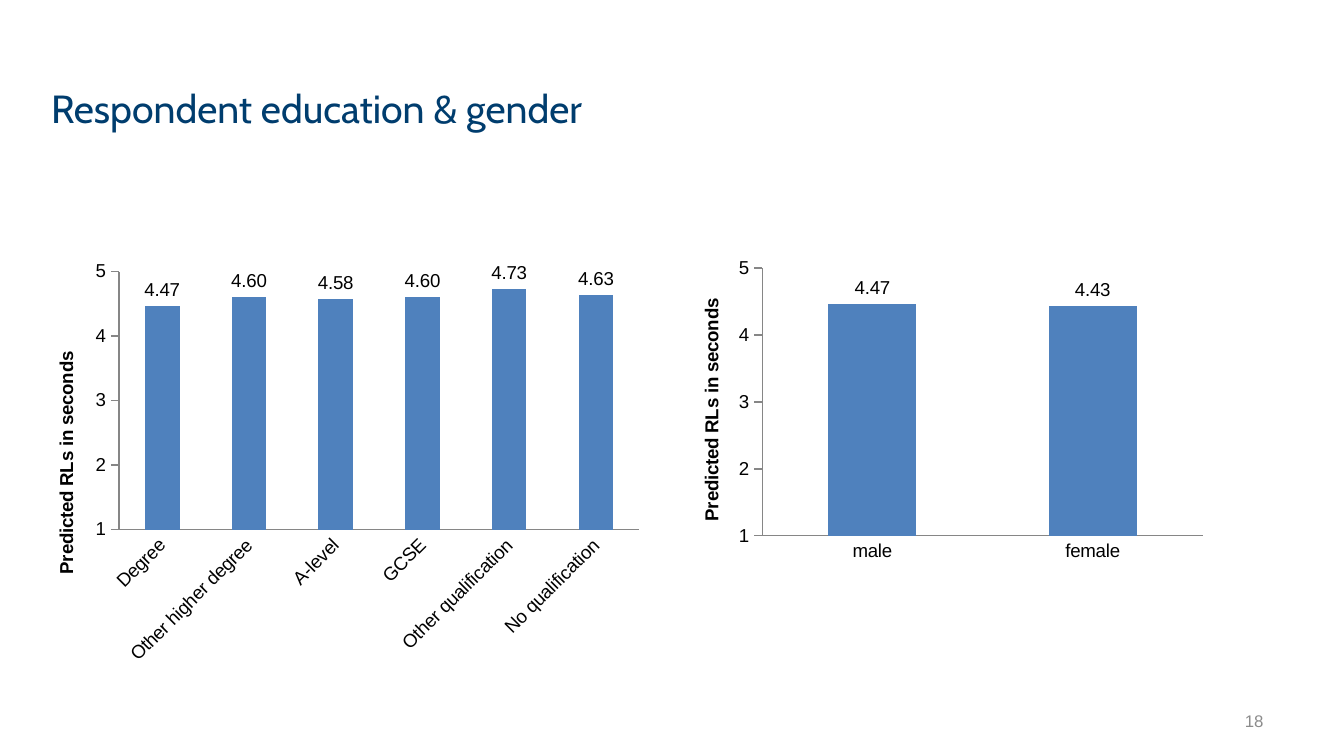
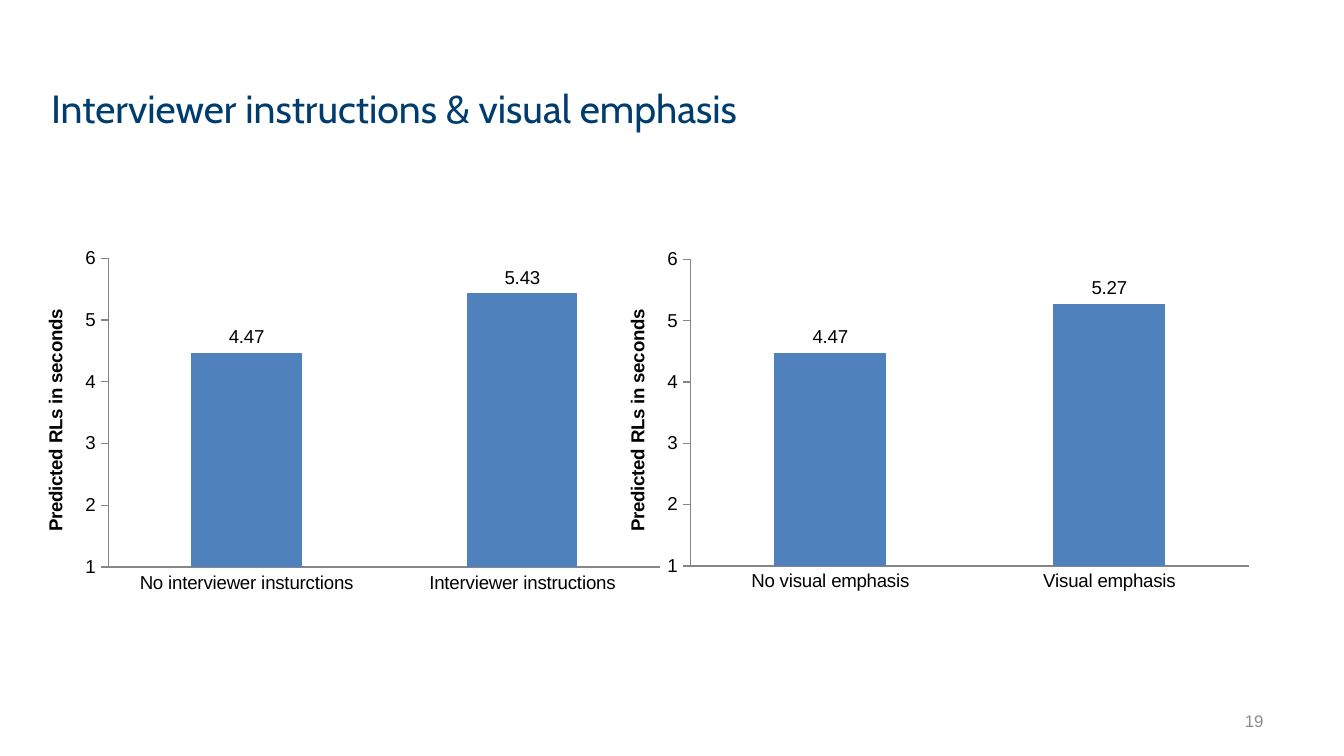
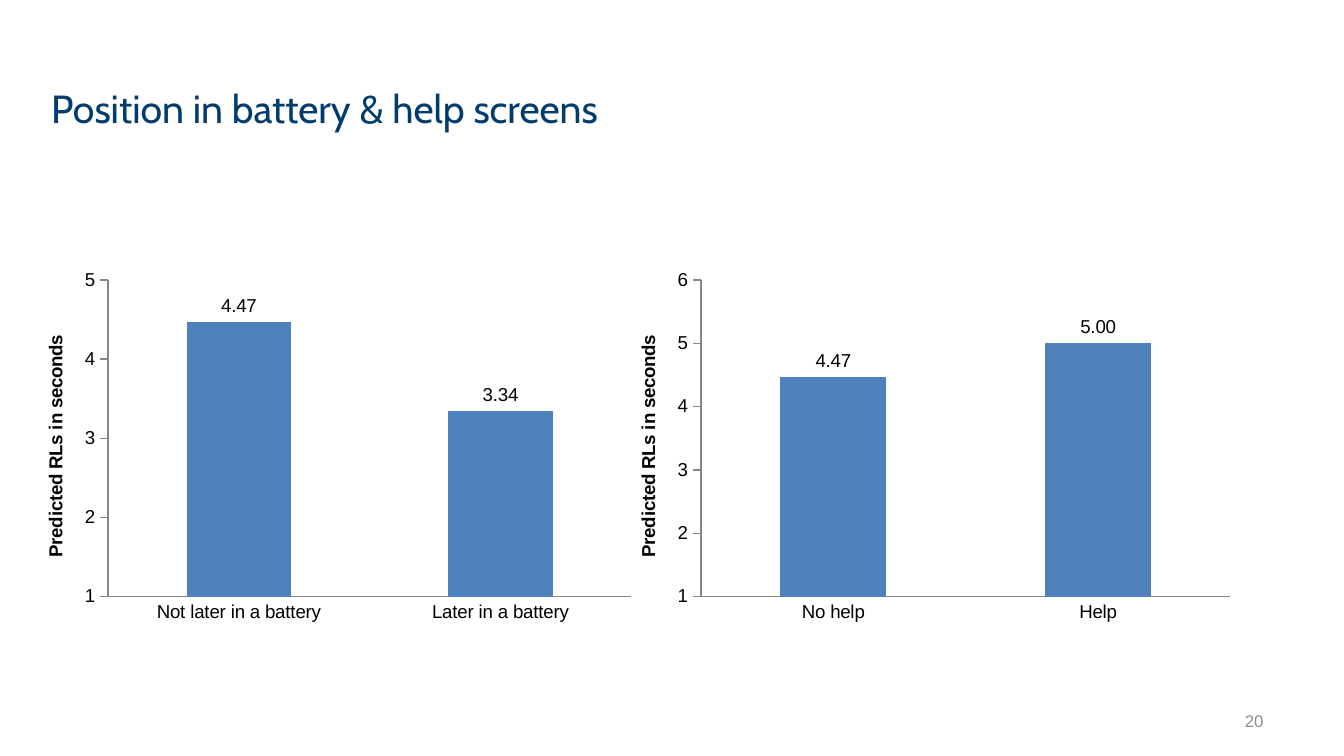
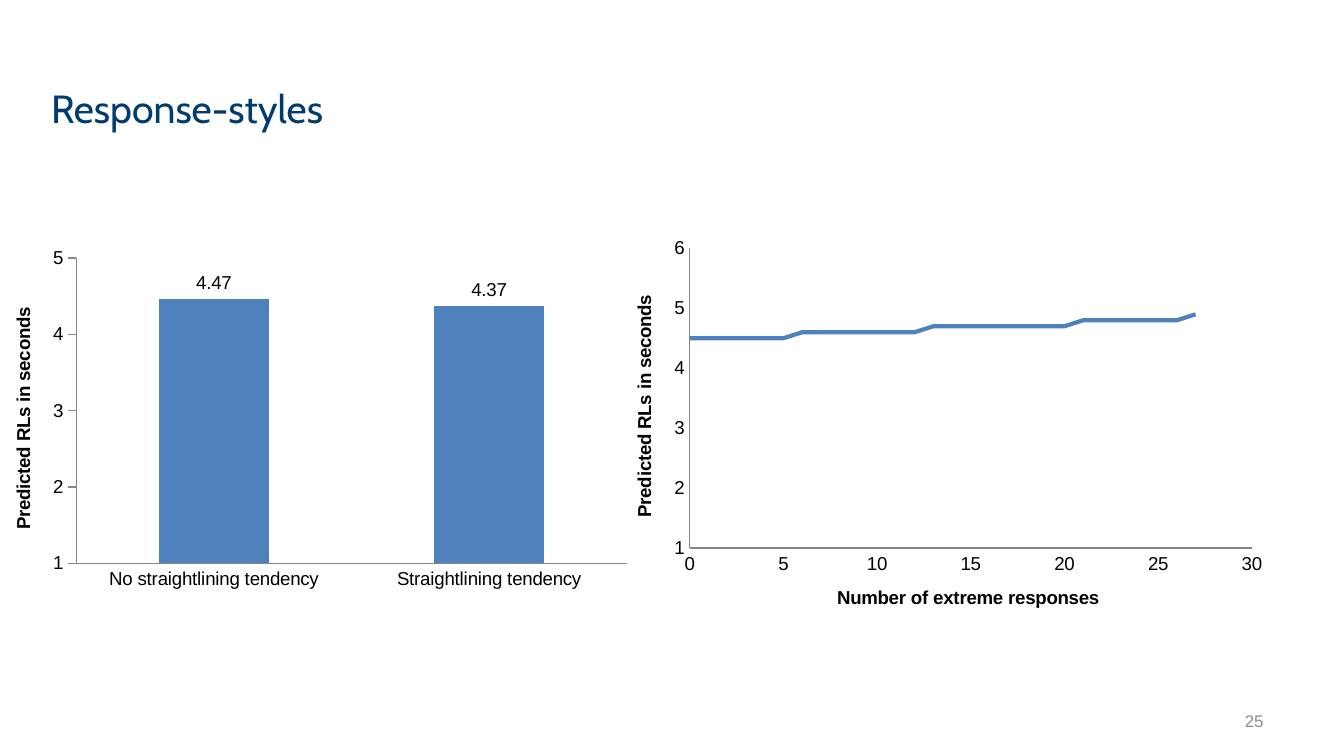
from dataclasses import dataclass

from pptx import Presentation
from pptx.chart.chart import Chart
from pptx.chart.data import CategoryChartData, XyChartData
from pptx.dml.color import RGBColor
from pptx.enum.chart import XL_CHART_TYPE, XL_LABEL_POSITION, XL_TICK_MARK
from pptx.enum.text import MSO_ANCHOR, PP_ALIGN
from pptx.util import Inches, Pt

NAVY, BLUE, GREY, RULE, BLACK = "003D6E", "4F81BD", "8C8C8C", "868686", "000000"
BODY, HEAD = "Arial", "Cabin"
SERIES = "Series 1"
TIMING = "Predicted RLs in seconds"
TITLE_BOX = (0.28, 0.58, 5.43, 0.75)
PAGE_BOX = (7.17, 5.21, 2.33, 0.3)

Box = tuple[float, float, float, float]


@dataclass
class Bars:
    box: Box
    data: dict[str, float]
    slant: bool = False


@dataclass
class Trend:
    box: Box
    label: str
    values: list[float]


@dataclass
class Page:
    number: int
    title: str
    charts: list[Bars | Trend]


PAGES = [
    Page(18, "Respondent education & gender", [
        Bars((0.2, 1.88, 4.65, 3.13), {
            "Degree": 4.47, "Other higher degree": 4.6, "A-level": 4.58,
            "GCSE": 4.6, "Other qualification": 4.73, "No qualification": 4.63,
        }, slant=True),
        Bars((5, 1.87, 4.03, 2.36), {"male": 4.47, "female": 4.43}),
    ]),
    Page(19, "Interviewer instructions & visual emphasis", [
        Bars((0.12, 1.79, 4.89, 2.68),
             {"No interviewer insturctions": 4.47, "Interviewer instructions": 5.43}),
        Bars((4.45, 1.8, 4.94, 2.66),
             {"No visual emphasis": 4.47, "Visual emphasis": 5.27}),
    ]),
    Page(20, "Position in battery & help screens", [
        Bars((0.12, 1.95, 4.67, 2.74),
             {"Not later in a battery": 4.47, "Later in a battery": 3.34}),
        Bars((4.53, 1.95, 4.72, 2.74), {"No help": 4.47, "Help": 5}),
    ]),
    Page(25, "Response-styles", [
        Bars((-0.12, 1.79, 4.88, 2.65),
             {"No straightlining tendency": 4.47, "Straightlining tendency": 4.37}),
        Trend((4.5, 1.71, 4.99, 3.03), "Number of extreme responses",
              [4.5] * 6 + [4.6] * 7 + [4.7] * 8 + [4.8] * 6 + [4.9]),
    ]),
]


def color(code: str) -> RGBColor:
    return RGBColor.from_string(code)


def lengths(box: Box) -> list[Inches]:
    return [Inches(side) for side in box]


def style(font, name: str, size: float, code: str, bold: bool = False) -> None:
    font.name, font.size, font.bold = name, Pt(size), bold
    font.color.rgb = color(code)


def name_axis(axis, label: str) -> None:
    frame = axis.axis_title.text_frame
    frame.text = label
    style(frame.paragraphs[0].font, BODY, 10, BLACK, bold=True)


def set_axes(chart: Chart, tick: XL_TICK_MARK) -> None:
    """Apply the axis look that all charts share."""
    across, up = chart.category_axis, chart.value_axis
    for axis in (across, up):
        axis.has_major_gridlines = False
        axis.minor_tick_mark = XL_TICK_MARK.NONE
        axis.format.line.color.rgb = color(RULE)
        axis.format.line.width = Pt(0.75)
        axis.tick_labels.number_format = "General"
        axis.tick_labels.number_format_is_linked = False
        style(axis.tick_labels.font, BODY, 10, BLACK)
    across.major_tick_mark, up.major_tick_mark = XL_TICK_MARK.NONE, tick
    up.minimum_scale = up.major_unit = 1
    name_axis(up, TIMING)


def add_chart(slide, kind: XL_CHART_TYPE, box: Box, data) -> Chart:
    chart = slide.shapes.add_chart(kind, *lengths(box), data).chart
    chart.has_title = chart.has_legend = False
    style(chart.font, BODY, 10, BLACK)
    chart.plots[0].vary_by_categories = False
    return chart


def draw_bars(slide, bars: Bars) -> None:
    data = CategoryChartData()
    data.categories = list(bars.data)
    data.add_series(SERIES, list(bars.data.values()))
    chart = add_chart(slide, XL_CHART_TYPE.COLUMN_CLUSTERED, bars.box, data)
    set_axes(chart, XL_TICK_MARK.OUTSIDE)
    if bars.slant:
        chart.category_axis._element.get_or_add_txPr().bodyPr.set("rot", "-2700000")
    plot = chart.plots[0]
    plot.gap_width = 150
    fill = plot.series[0].format.fill
    fill.solid()
    fill.fore_color.rgb = color(BLUE)
    labels = plot.series[0].data_labels
    labels.show_value = True
    labels.number_format = "#,##0.00"
    labels.number_format_is_linked = False
    labels.position = XL_LABEL_POSITION.OUTSIDE_END
    style(labels.font, BODY, 10, BLACK)


def draw_trend(slide, trend: Trend) -> None:
    data = XyChartData()
    line = data.add_series(SERIES)
    for x, y in enumerate(trend.values):
        line.add_data_point(x, y)
    kind = XL_CHART_TYPE.XY_SCATTER_SMOOTH_NO_MARKERS
    chart = add_chart(slide, kind, trend.box, data)
    set_axes(chart, XL_TICK_MARK.NONE)
    name_axis(chart.category_axis, trend.label)
    stroke = chart.plots[0].series[0].format.line
    stroke.color.rgb = color(BLUE)
    stroke.width = Pt(2.25)


def draw_title(slide, text: str) -> None:
    title = slide.shapes.title
    title.left, title.top, title.width, title.height = lengths(TITLE_BOX)
    frame = title.text_frame
    frame.text = text
    frame.vertical_anchor = MSO_ANCHOR.TOP
    line = frame.paragraphs[0]
    line.alignment = PP_ALIGN.LEFT
    style(line.font, HEAD, 21, NAVY)


def draw_number(slide, number: int) -> None:
    frame = slide.shapes.add_textbox(*lengths(PAGE_BOX)).text_frame
    frame.word_wrap = True
    frame.vertical_anchor = MSO_ANCHOR.MIDDLE
    line = frame.paragraphs[0]
    line.text = str(number)
    line.alignment = PP_ALIGN.RIGHT
    style(line.font, BODY, 9, GREY)


def main() -> None:
    deck = Presentation()
    deck.slide_width, deck.slide_height = Inches(10), Inches(10 * 9 / 16)
    layout = deck.slide_layouts.get_by_name("Title Only")
    for page in PAGES:
        slide = deck.slides.add_slide(layout)
        draw_number(slide, page.number)
        draw_title(slide, page.title)
        for chart in page.charts:
            if isinstance(chart, Bars):
                draw_bars(slide, chart)
            else:
                draw_trend(slide, chart)
    deck.save("out.pptx")


if __name__ == "__main__":
    main()
